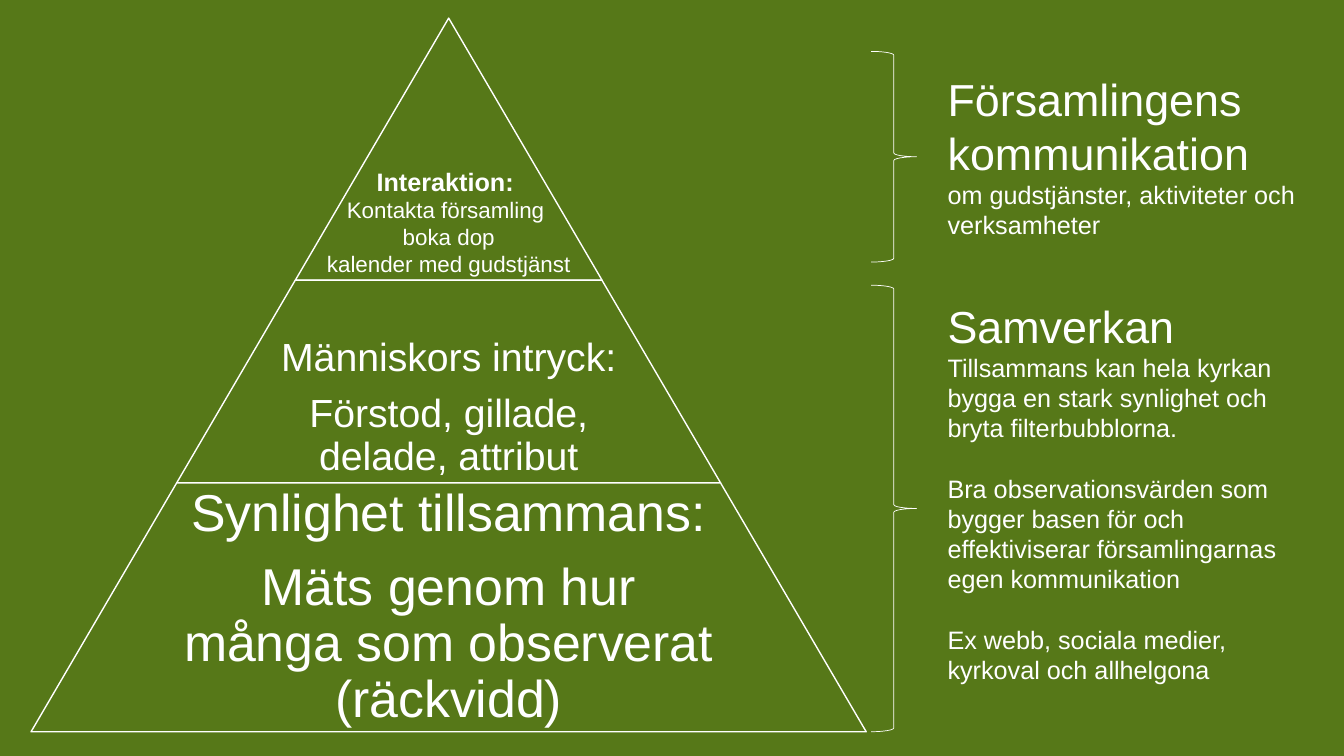
from pptx import Presentation
from pptx.dml.color import RGBColor
from pptx.enum.shapes import MSO_SHAPE
from pptx.enum.text import MSO_ANCHOR, PP_ALIGN
from pptx.util import Inches, Pt

GREEN, WHITE = "567818", "FFFFFF"


def color(hex_string):
    return RGBColor.from_string(hex_string)


def add_text(left, top, width, height, paragraphs, anchor, align, insets, line_spacing=1.0):
    """Each paragraph is (text, size, bold, space before)."""
    frame = slide.shapes.add_textbox(
        Inches(left), Inches(top), Inches(width), Inches(height)).text_frame
    frame.word_wrap = True
    frame.vertical_anchor = anchor
    frame.margin_left = frame.margin_right = Inches(insets[0])
    frame.margin_top = frame.margin_bottom = Inches(insets[1])
    for index, (text, size, bold, space_before) in enumerate(paragraphs):
        paragraph = frame.paragraphs[0] if index == 0 else frame.add_paragraph()
        paragraph.alignment = align
        paragraph.line_spacing = line_spacing
        paragraph.space_before = Pt(space_before)
        run = paragraph.add_run()
        run.text = text
        run.font.name = "Arial"
        run.font.size = Pt(size)
        run.font.bold = bold
        run.font.color.rgb = color(WHITE)


prs = Presentation()
prs.slide_width, prs.slide_height = Inches(13.33), Inches(7.5)
slide = prs.slides.add_slide(prs.slide_layouts[6])
slide.background.fill.solid()
slide.background.fill.fore_color.rgb = color(GREEN)

# Pyramid: levels share one centre line and one slope
CENTER, APEX, SLOPE = 4.45, 0.18, 0.585
levels = [
    (0.18, 2.78, 3.05, 0.03, 1.0, MSO_ANCHOR.BOTTOM,
     [("Interaktion: ", 18, True, 0), ("Kontakta församling ", 16, False, 0),
      ("boka dop", 16, False, 0), ("kalender med gudstjänst", 16, False, 0)]),
    (2.78, 4.79, 3.51, 0.04, 0.9, MSO_ANCHOR.BOTTOM,
     [("Människors intryck:", 28, False, 0),
      ("Förstod, gillade, delade, attribut", 28, False, 9.8)]),
    (4.79, 7.26, 5.39, 0.05, 0.9, MSO_ANCHOR.MIDDLE,
     [("Synlighet tillsammans:", 37, False, 0),
      ("Mäts genom hur många som observerat (räckvidd)", 37, False, 13)]),
]
for top, bottom, text_width, inset, spacing, anchor, paragraphs in levels:
    half_width = SLOPE * (bottom - APEX)
    level = slide.shapes.add_shape(
        MSO_SHAPE.TRAPEZOID, Inches(CENTER - half_width), Inches(top),
        Inches(2 * half_width), Inches(bottom - top))
    level.adjustments[0] = SLOPE
    level.shadow.inherit = False
    level.fill.solid()
    level.fill.fore_color.rgb = color(GREEN)
    level.line.color.rgb = color(WHITE)
    level.line.width = Pt(1)
    add_text(CENTER - text_width / 2, top, text_width, bottom - top,
             paragraphs, anchor, PP_ALIGN.CENTER, (inset, inset), spacing)

# Braces with their explanations
explanations = [
    (0.51, 2.09, 0.66, 3.65, 1.78,
     [("Församlingens kommunikation", 32, False, 0),
      ("om gudstjänster, aktiviteter och verksamheter", 18, False, 0)]),
    (2.83, 4.43, 2.91, 3.53, 3.97,
     [("Samverkan", 32, False, 0),
      ("Tillsammans kan hela kyrkan bygga en stark synlighet och bryta filterbubblorna.",
       18, False, 0),
      ("Bra observationsvärden som bygger basen för och effektiviserar "
       "församlingarnas egen kommunikation", 18, False, 21.5),
      ("Ex webb, sociala medier, kyrkoval och allhelgona", 18, False, 21.5)]),
]
for brace_top, brace_height, top, width, height, paragraphs in explanations:
    brace = slide.shapes.add_shape(
        MSO_SHAPE.RIGHT_BRACE, Inches(8.64), Inches(brace_top),
        Inches(0.45), Inches(brace_height))
    brace.shadow.inherit = False
    brace.fill.background()
    brace.line.color.rgb = color(WHITE)
    brace.line.width = Pt(0.5)
    add_text(9.3, top, width, height, paragraphs,
             MSO_ANCHOR.TOP, PP_ALIGN.LEFT, (0.1, 0.05))

prs.save("out.pptx")
